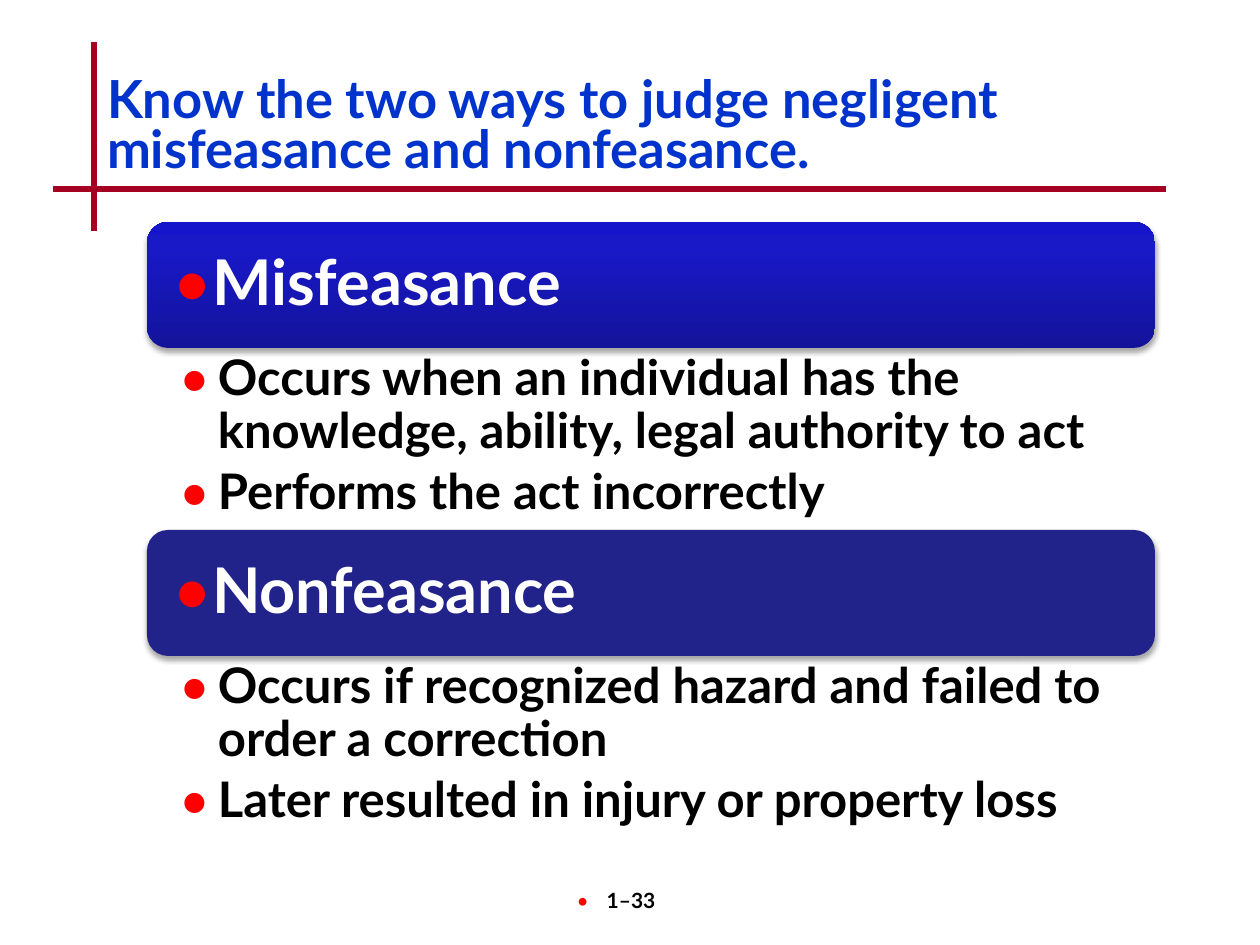
from copy import deepcopy

from lxml.etree import SubElement
from pptx import Presentation
from pptx.dml.color import RGBColor
from pptx.enum.shapes import MSO_CONNECTOR as Connector, MSO_SHAPE as Shape
from pptx.enum.text import MSO_ANCHOR as Anchor, MSO_AUTO_SIZE as AutoSize, PP_ALIGN as Align
from pptx.oxml.ns import qn
from pptx.util import Emu, Pt

SCALE = 914400 / 126
FONT = "Lato"
COLORS = {
    "title": "0033CC", "rule": "A50021", "bullet": "FF0000", "text": "000000",
    "header": "FFFFFF", "navy": "22228B", "dark": "13139A", "mid": "1919C8",
    "bright": "1515CC",
}
TITLE = "Know the two ways to judge negligent misfeasance and nonfeasance."
SECTIONS = [
    ("Misfeasance", [("dark", 0), ("mid", 80), ("bright", 100)],
     ["Occurs when an individual has the knowledge, ability, legal authority to act",
      "Performs the act incorrectly"]),
    ("Nonfeasance", [("navy", 0)],
     ["Occurs if recognized hazard and failed to order a correction",
      "Later resulted in injury or property loss"]),
]
LEFT, TOP, WIDTH = 147, 222, 1008
HEADER_HEIGHT, LIST_HEIGHT = 126, 182


def px(length):
    """Turn pixels into EMU."""
    return Emu(round(length * SCALE))


def rgb(name):
    """Look up a named colour."""
    return RGBColor.from_string(COLORS[name])


def place(shape, left, top, width, height):
    """Move and size a shape."""
    shape.left, shape.top = px(left), px(top)
    shape.width, shape.height = px(width), px(height)


def set_frame(frame, insets, anchor):
    """Set insets (left, top, right, bottom), anchor and wrapping."""
    frame.word_wrap = True
    frame.auto_size = AutoSize.NONE
    frame.vertical_anchor = anchor
    frame.margin_left, frame.margin_top, frame.margin_right, frame.margin_bottom = map(px, insets)


def add_bullet(para, margin=0, indent=0, size=110):
    """Give a paragraph a red bullet."""
    props = para._p.get_or_add_pPr()
    props.set("marL", str(px(margin)))
    props.set("indent", str(px(indent)))
    color = SubElement(props, qn("a:buClr"))
    SubElement(color, qn("a:srgbClr"), val=COLORS["bullet"])
    SubElement(props, qn("a:buSzPct"), val=str(size * 1000))
    SubElement(props, qn("a:buFont"), typeface=FONT)
    SubElement(props, qn("a:buChar"), char="•")


def format_para(para, size, color, align=Align.LEFT, line=1.0, after=0):
    """Set spacing, alignment and font of a paragraph."""
    para.alignment = align
    para.line_spacing = line
    para.space_before, para.space_after = Pt(0), Pt(after)
    para.font.name, para.font.size, para.font.bold = FONT, Pt(size), True
    para.font.color.rgb = rgb(color)


def add_rule(page, x1, y1, x2, y2):
    """Draw one of the red rules."""
    rule = page.shapes.add_connector(Connector.STRAIGHT, px(x1), px(y1), px(x2), px(y2))
    rule.line.color.rgb = rgb("rule")
    rule.line.width = Pt(3)
    SubElement(rule._element.spPr, qn("a:effectLst"))


def fill_shape(shape, stops):
    """Fill with one colour or an upward gradient."""
    if len(stops) == 1:
        shape.fill.solid()
        shape.fill.fore_color.rgb = rgb(stops[0][0])
        return
    shape.fill.gradient()
    shape.fill.gradient_angle = 90
    stop_list = shape._element.spPr.find(qn("a:gradFill")).find(qn("a:gsLst"))
    while len(stop_list) < len(stops):
        stop_list.append(deepcopy(stop_list[-1]))
    for stop, (color, percent) in zip(shape.fill.gradient_stops, stops):
        stop.color.rgb = rgb(color)
        stop.position = percent / 100


def add_shadow(shape):
    """Add a soft shadow below a shape."""
    shape.shadow.inherit = False
    effects = shape._element.spPr.find(qn("a:effectLst"))
    shadow = SubElement(effects, qn("a:outerShdw"), blurRad=str(Pt(3.1)), dist=str(Pt(1.8)),
                        dir="5400000", rotWithShape="0")
    color = SubElement(shadow, qn("a:srgbClr"), val=COLORS["text"])
    SubElement(color, qn("a:alpha"), val="35000")


def add_header(page, text, stops, top):
    """Add a rounded section header."""
    header = page.shapes.add_shape(Shape.ROUNDED_RECTANGLE, px(LEFT), px(top),
                                   px(WIDTH), px(HEADER_HEIGHT))
    fill_shape(header, stops)
    header.line.fill.background()
    add_shadow(header)
    set_frame(header.text_frame, (19, 19, 19, 19), Anchor.MIDDLE)
    para = header.text_frame.paragraphs[0]
    para.text = text
    add_bullet(para)
    format_para(para, 36, "header", line=0.9)


def fill_list(body, items, top):
    """Place a body placeholder and fill it with bulleted items."""
    place(body, LEFT, top, WIDTH, LIST_HEIGHT)
    frame = body.text_frame
    set_frame(frame, (32, 5, 28, 5), Anchor.TOP)
    frame.text = "\n".join(items)
    for para in frame.paragraphs:
        para.level = 1
        add_bullet(para, 39, -39)
        format_para(para, 28, "text", line=0.9, after=5)


def fill_title(title):
    """Place and fill the title."""
    place(title, 94, 55, 1071, 147)
    set_frame(title.text_frame, (13, 6, 13, 6), Anchor.MIDDLE)
    title.text_frame.text = TITLE
    format_para(title.text_frame.paragraphs[0], 30, "title", line=0.8)


def add_page_number(page):
    """Add the page number at the foot."""
    box = page.shapes.add_textbox(px(494), px(882), px(262), px(63))
    set_frame(box.text_frame, (13, 6, 13, 6), Anchor.TOP)
    para = box.text_frame.paragraphs[0]
    para.text = "1–33"
    add_bullet(para, 7, -30, 100)
    format_para(para, 12, "text", Align.CENTER)


def main():
    """Build the slide."""
    deck = Presentation()
    deck.slide_width, deck.slide_height = px(1260), px(945)
    page = deck.slides.add_slide(deck.slide_layouts[3])
    add_rule(page, 94, 42, 94, 231)
    add_rule(page, 53, 189, 1166, 189)
    add_page_number(page)
    fill_title(page.shapes.title)
    for index, (name, stops, items) in enumerate(SECTIONS):
        top = TOP + index * (HEADER_HEIGHT + LIST_HEIGHT)
        add_header(page, name, stops, top)
        fill_list(page.placeholders[index + 1], items, top + HEADER_HEIGHT)
    deck.save("out.pptx")


if __name__ == "__main__":
    main()
